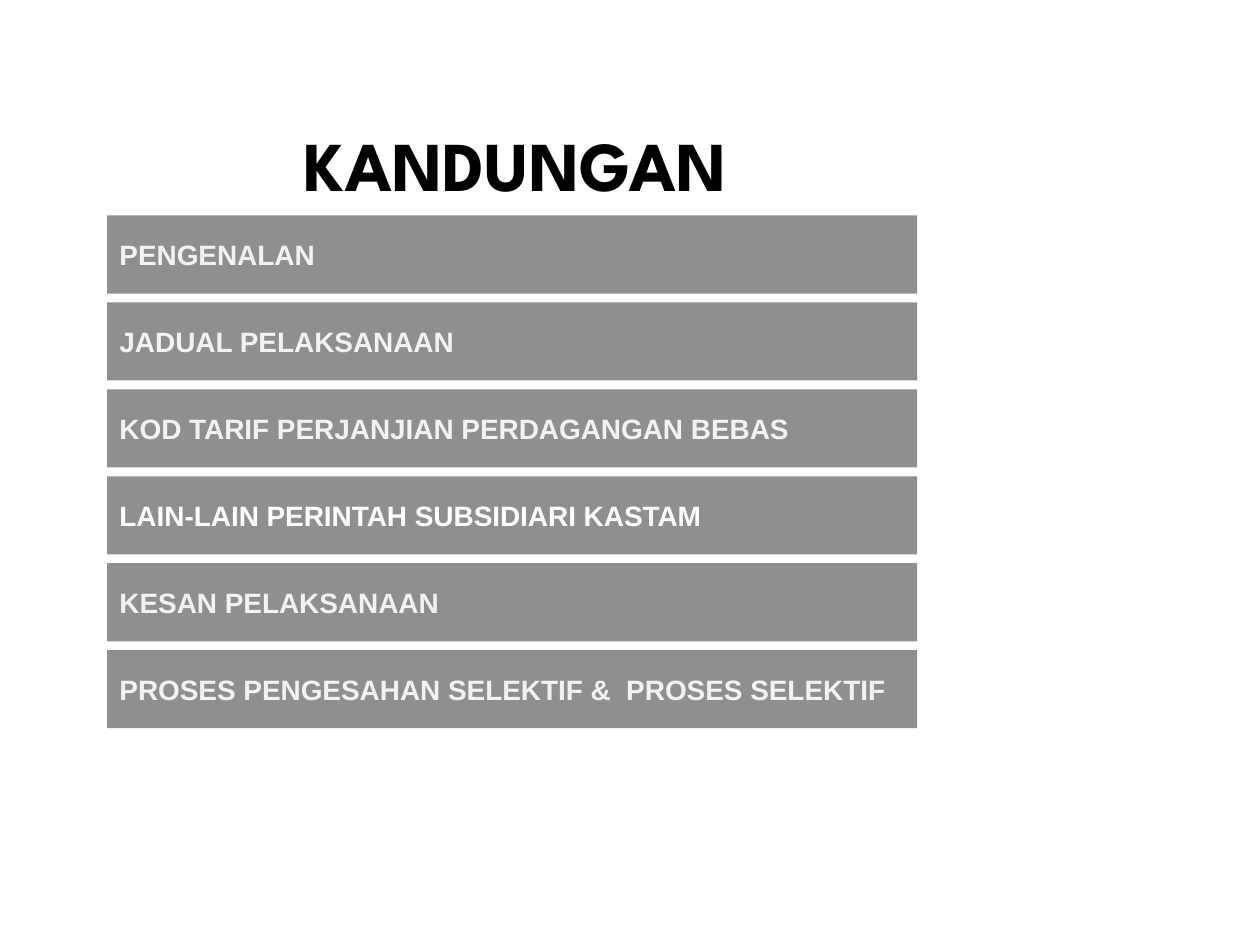
from pptx import Presentation
from pptx.dml.color import RGBColor
from pptx.enum.shapes import MSO_SHAPE
from pptx.enum.text import MSO_ANCHOR, MSO_AUTO_SIZE, PP_ALIGN
from pptx.util import Inches, Pt

BAR_LEFT, BAR_TOP = 0.85, 1.71
BAR_WIDTH, BAR_HEIGHT = 6.43, 0.62
BAR_PITCH = 0.69
BAR_FILL = "8F8F8F"
SOFT_WHITE = "F2F2F2"

TOPICS = [
    ("PENGENALAN", SOFT_WHITE),
    ("JADUAL PELAKSANAAN", SOFT_WHITE),
    ("KOD TARIF PERJANJIAN PERDAGANGAN BEBAS", SOFT_WHITE),
    ("LAIN-LAIN PERINTAH SUBSIDIARI KASTAM", "FFFFFF"),
    ("KESAN PELAKSANAAN", SOFT_WHITE),
    ("PROSES PENGESAHAN SELEKTIF &  PROSES SELEKTIF", SOFT_WHITE),
]


def color(value):
    return RGBColor.from_string(value)


def write_text(shape, text, font_name, size, text_color):
    """Fill a shape with one bold, left-aligned, vertically centred line."""
    frame = shape.text_frame
    frame.text = text
    frame.word_wrap = True
    frame.auto_size = MSO_AUTO_SIZE.NONE
    frame.vertical_anchor = MSO_ANCHOR.MIDDLE
    paragraph = frame.paragraphs[0]
    paragraph.alignment = PP_ALIGN.LEFT
    font = paragraph.font
    font.name = font_name
    font.size = Pt(size)
    font.bold = True
    font.color.rgb = color(text_color)
    return paragraph


def set_title(slide, text):
    title = slide.shapes.title
    title.left, title.top = Inches(2.32), Inches(0.83)
    title.width, title.height = Inches(7.26), Inches(1.02)
    paragraph = write_text(title, text, "League Spartan", 40, "000000")
    paragraph.line_spacing = 0.9


def add_topic_bar(slide, row, text, text_color):
    bar = slide.shapes.add_shape(
        MSO_SHAPE.RECTANGLE,
        Inches(BAR_LEFT), Inches(BAR_TOP + row * BAR_PITCH),
        Inches(BAR_WIDTH), Inches(BAR_HEIGHT),
    )
    bar.shadow.inherit = False
    bar.fill.solid()
    bar.fill.fore_color.rgb = color(BAR_FILL)
    bar.line.fill.background()
    write_text(bar, text, "Arial", 16, text_color)


def main():
    presentation = Presentation()
    presentation.slide_width = Inches(10)
    presentation.slide_height = Inches(7.5)
    slide = presentation.slides.add_slide(presentation.slide_layouts[5])
    set_title(slide, "KANDUNGAN")
    for row, (text, text_color) in enumerate(TOPICS):
        add_topic_bar(slide, row, text, text_color)
    presentation.save("out.pptx")


if __name__ == "__main__":
    main()
